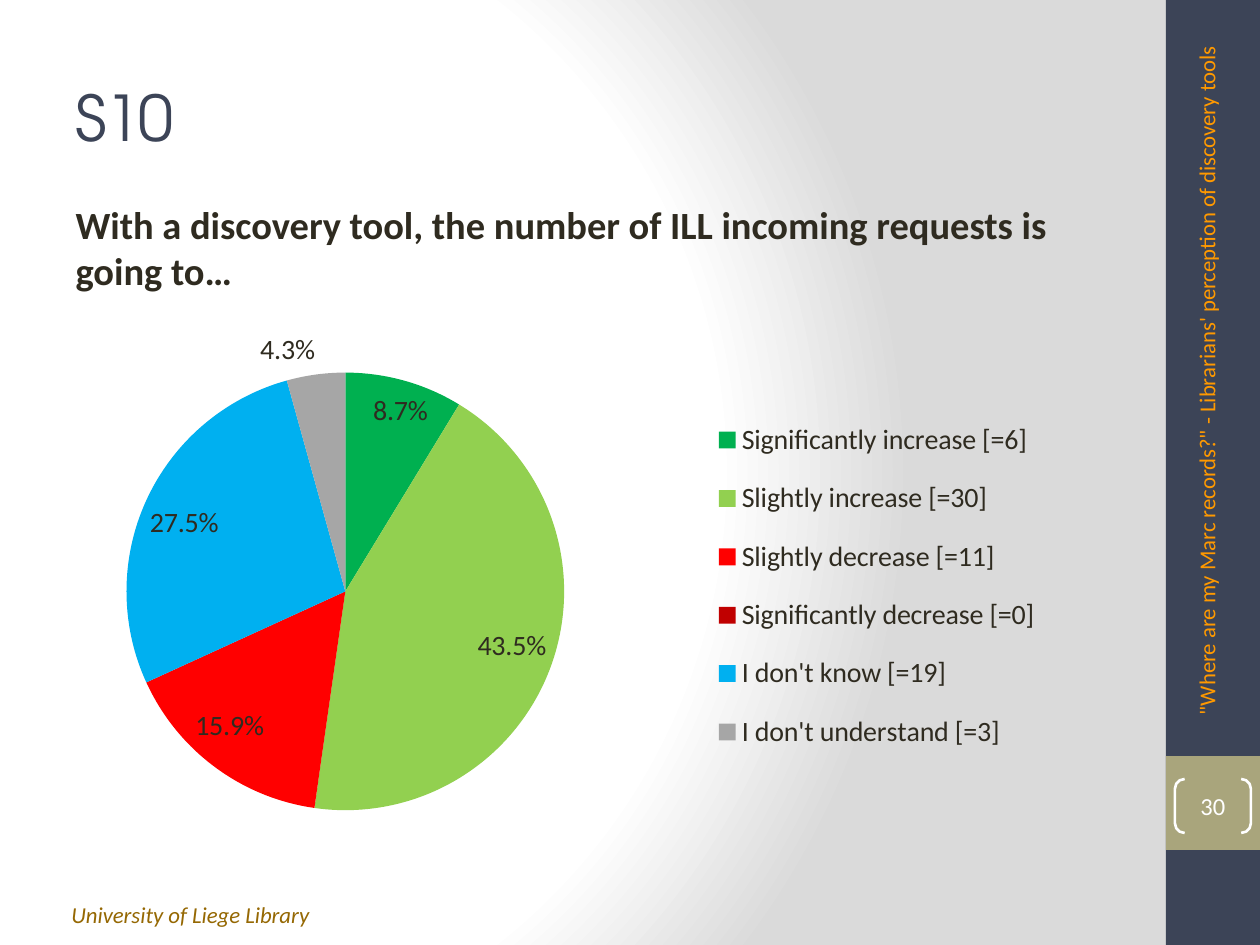
import pptx
import pptx.chart.data
import pptx.dml.color
import pptx.enum.chart
import pptx.enum.shapes
import pptx.enum.text
import pptx.oxml
import pptx.oxml.ns
import pptx.util
from dataclasses import dataclass

PX = 914400 // 126
NS = pptx.oxml.ns.nsdecls


@dataclass(frozen=True)
class Theme:
    heading: str = "TeX Gyre Adventor"
    text: str = "Calibri"
    navy: str = "3C4457"
    olive: str = "A9A57C"
    gold: str = "956803"
    orange: str = "FF9900"
    ink: str = "2F2B20"
    white: str = "FFFFFF"
    grey: str = "DADADA"
    title_size: int = 36
    question_size: int = 22
    chart_size: int = 16
    number_size: int = 14
    small_size: int = 13


def rgb(color):
    return pptx.dml.color.RGBColor.from_string(color)


class SlideBuilder:
    def __init__(self, page, theme):
        self.page = page
        self.theme = theme

    def place(self, box, area):
        box.left, box.top, box.width, box.height = (n * PX for n in area)

    def style(self, font, size, color, name=None, bold=False, italic=False):
        font.name = name or self.theme.text
        font.size = pptx.util.Pt(size)
        font.color.rgb = rgb(color)
        font.bold = bold
        font.italic = italic

    def set_text(self, box, text, size, color, align="LEFT", anchor="TOP", **look):
        frame = box.text_frame
        frame.word_wrap = True
        frame.auto_size = pptx.enum.text.MSO_AUTO_SIZE.NONE
        frame.vertical_anchor = getattr(pptx.enum.text.MSO_ANCHOR, anchor)
        para = frame.paragraphs[0]
        para.text = text
        para.alignment = getattr(pptx.enum.text.PP_ALIGN, align)
        para.space_before = pptx.util.Pt(0)
        self.style(para.font, size, color, **look)
        return para

    def background(self):
        fill = self.page.background.fill
        fill.gradient()
        stops = ((0, self.theme.white), (75, self.theme.white), (100, self.theme.grey))
        stop_xml = "".join(
            f'<a:gs pos="{pos * 1000}"><a:srgbClr val="{color}"/></a:gs>'
            for pos, color in stops)
        radial = pptx.oxml.parse_xml(
            f'<a:gradFill {NS("a")} rotWithShape="1"><a:gsLst>{stop_xml}</a:gsLst>'
            '<a:path path="circle"><a:fillToRect l="20000" t="50000" r="100000" b="50000"/>'
            '</a:path></a:gradFill>')
        linear = self.page.background._cSld.find(".//" + pptx.oxml.ns.qn("a:gradFill"))
        linear.getparent().replace(linear, radial)

    def block(self, area, color):
        box = self.page.shapes.add_shape(
            pptx.enum.shapes.MSO_SHAPE.RECTANGLE, *(n * PX for n in area))
        box.shadow.inherit = False
        box.fill.solid()
        box.fill.fore_color.rgb = rgb(color)
        box.line.fill.background()

    def brackets(self, area, text):
        box = self.page.shapes.add_shape(
            pptx.enum.shapes.MSO_SHAPE.DOUBLE_BRACKET, *(n * PX for n in area))
        box.shadow.inherit = False
        box.adjustments[0] = 0.18
        box.fill.background()
        box.line.color.rgb = rgb(self.theme.white)
        box.line.width = pptx.util.Pt(1.5)
        frame = box.text_frame
        frame.margin_left = frame.margin_top = frame.margin_right = frame.margin_bottom = 0
        self.set_text(box, text, self.theme.number_size, self.theme.white, "CENTER", "MIDDLE")

    def label(self, area, text, color, rotation=0, **look):
        box = self.page.shapes.add_textbox(*(n * PX for n in area))
        box.rotation = rotation
        self.set_text(box, text, self.theme.small_size, color, **look)

    def title(self, area, text):
        box = self.page.shapes.title
        self.place(box, area)
        para = self.set_text(box, text, self.theme.title_size, self.theme.navy,
                             anchor="MIDDLE", name=self.theme.heading)
        para.font._rPr.set("spc", "-100")

    def body(self, area, text):
        box = self.page.placeholders[1]
        self.place(box, area)
        props = box.text_frame.paragraphs[0]._p.get_or_add_pPr()
        props.set("marL", "0")
        props.set("indent", "0")
        props.append(pptx.oxml.parse_xml(f'<a:buNone {NS("a")}/>'))
        self.set_text(box, text, self.theme.question_size, self.theme.ink, bold=True)

    def layout_xml(self, x, y, w, h, target=""):
        return pptx.oxml.parse_xml(
            f'<c:layout {NS("c")}><c:manualLayout>{target}'
            '<c:xMode val="edge"/><c:yMode val="edge"/>'
            f'<c:x val="{x}"/><c:y val="{y}"/><c:w val="{w}"/><c:h val="{h}"/>'
            '</c:manualLayout></c:layout>')

    def pie(self, area, slices):
        data = pptx.chart.data.CategoryChartData(number_format="0.0%")
        data.categories = [name for name, _, _ in slices]
        data.add_series("Series 1", [value for _, value, _ in slices])
        chart = self.page.shapes.add_chart(
            pptx.enum.chart.XL_CHART_TYPE.PIE, *(n * PX for n in area), data).chart
        self.style(chart.font, self.theme.chart_size, self.theme.ink)
        chart.has_title = False

        # Slice colours and labels; the number format hides the zero
        plot = chart.plots[0]
        plot.vary_by_categories = True
        for index, (_, _, color) in enumerate(slices):
            fill = plot.series[0].points[index].format.fill
            fill.solid()
            fill.fore_color.rgb = rgb(color)
        plot.has_data_labels = True
        labels = plot.data_labels
        labels.show_value = True
        labels.show_percentage = False
        labels.number_format = "0.0%;;"
        labels.number_format_is_linked = False
        labels.position = pptx.enum.chart.XL_LABEL_POSITION.BEST_FIT
        self.style(labels.font, self.theme.chart_size, self.theme.ink)

        # Legend and plot positions
        chart.has_legend = True
        legend = chart.legend
        legend.position = pptx.enum.chart.XL_LEGEND_POSITION.RIGHT
        legend.include_in_layout = False
        self.style(legend.font, self.theme.chart_size, self.theme.ink)
        qn = pptx.oxml.ns.qn
        for old in legend._element.findall(qn("c:layout")):
            legend._element.remove(old)
        legend._element.find(qn("c:legendPos")).addnext(
            self.layout_xml(0.61, 0.14, 0.34, 0.7))
        plot_area = chart._chartSpace.chart.plotArea
        for old in plot_area.findall(qn("c:layout")):
            plot_area.remove(old)
        plot_area.insert(0, self.layout_xml(
            0.06, 0.08, 0.42, 0.84, '<c:layoutTarget val="inner"/>'))


def main():
    theme = Theme()
    deck = pptx.Presentation()
    deck.slide_width = pptx.util.Inches(10)
    deck.slide_height = pptx.util.Inches(7.5)
    slide = SlideBuilder(deck.slides.add_slide(deck.slide_layouts[1]), theme)

    # Background, side band and footer
    slide.background()
    slide.block((1166, 0, 94, 945), theme.navy)
    slide.block((1166, 756, 94, 94), theme.olive)
    slide.label((59, 895, 670, 40), "University of Liege Library", theme.gold, italic=True)

    # Heading and question
    slide.title((63, 38, 1050, 157), "S10")
    slide.body((63, 195, 1050, 687),
               "With a discovery tool, the number of ILL incoming requests is going to…")

    # Page number and talk title in the side band
    slide.brackets((1175, 779, 76, 54), "30")
    slide.label((861, 352, 701, 50),
                "\"Where are my Marc records?\" - Librarians' perception of discovery tools",
                theme.orange, rotation=270)

    # Answers
    slide.pie((64, 324, 1042, 535), (
        ("Significantly increase [=6]", 0.087, "00B050"),
        ("Slightly increase [=30]", 0.435, "92D050"),
        ("Slightly decrease [=11]", 0.159, "FF0000"),
        ("Significantly decrease [=0]", 0, "C00000"),
        ("I don't know [=19]", 0.275, "00B0F0"),
        ("I don't understand [=3]", 0.043, "A6A6A6"),
    ))
    deck.save("out.pptx")


if __name__ == "__main__":
    main()
